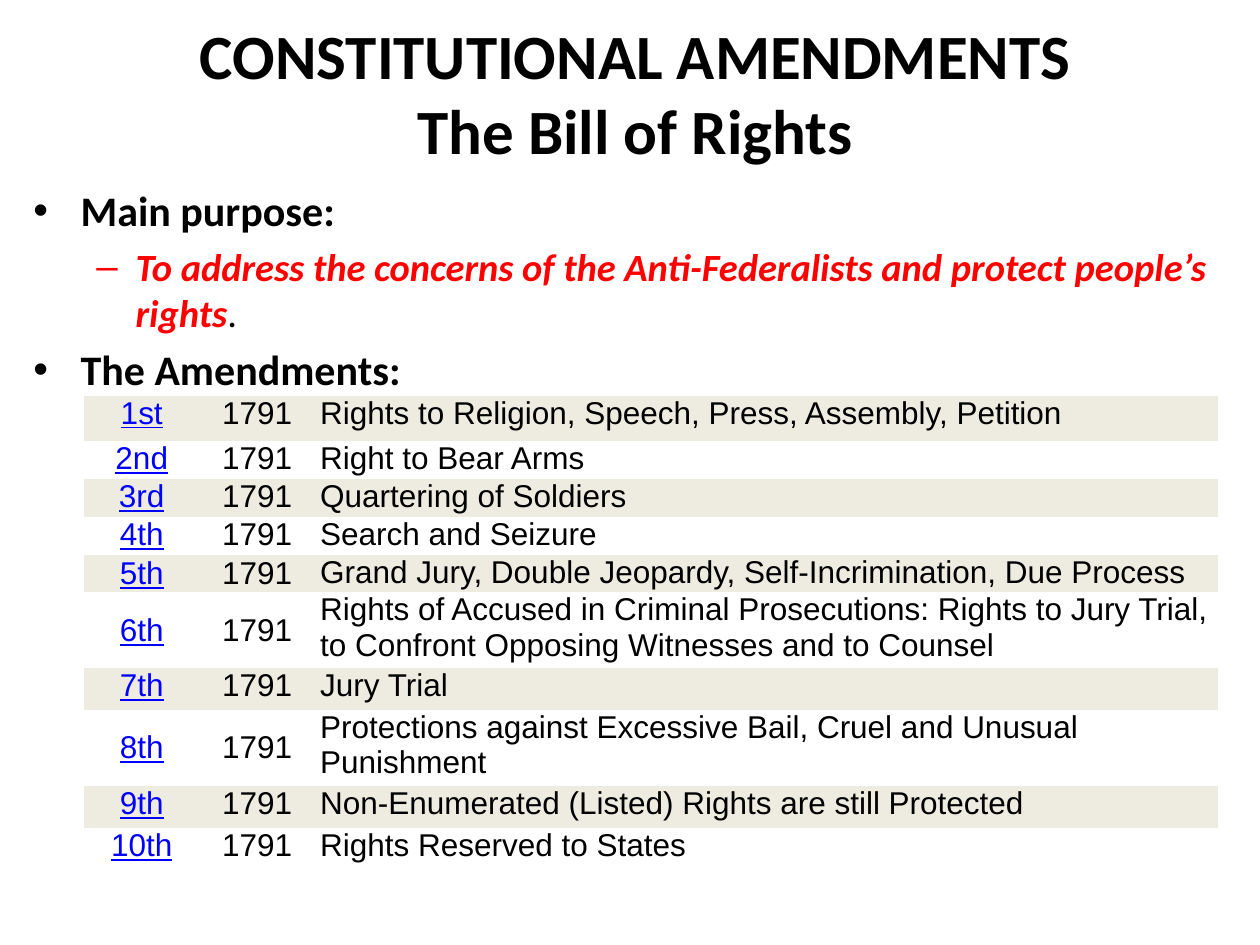
from lxml import etree
from pptx import Presentation
from pptx.dml.color import RGBColor
from pptx.enum.text import MSO_ANCHOR, PP_ALIGN
from pptx.oxml.ns import qn
from pptx.util import Pt

MID, TOP = MSO_ANCHOR.MIDDLE, MSO_ANCHOR.TOP
LEFT, CENTER = PP_ALIGN.LEFT, PP_ALIGN.CENTER
BLACK, RED, BLUE, BAND = "000000", "FF0000", "0000FF", "EEECE1"
PLAIN = "{2D5ABB26-0587-4C30-8999-92F81FD0307C}"

HEAD = {"name": "Calibri", "size": Pt(36), "bold": True}
ITEM = {"name": "Calibri", "size": Pt(24), "bold": True}
NOTE = {"name": "Calibri", "size": Pt(22), "bold": True, "italic": True}
STOP = {"name": "Calibri", "size": Pt(22)}
CELL = {"name": "Arial", "size": Pt(18)}
LINK = {**CELL, "underline": True}
INSET = {"margin_left": Pt(3), "margin_right": Pt(3),
         "margin_top": 0, "margin_bottom": 0}

YEAR = "1791"
COLS = (66, 66, 516)
ROWS = (
    ("1st", "Rights to Religion, Speech, Press, Assembly, Petition", 26, TOP),
    ("2nd", "Right to Bear Arms", 18, TOP),
    ("3rd", "Quartering of Soldiers", 18, TOP),
    ("4th", "Search and Seizure", 18, TOP),
    ("5th", "Grand Jury, Double Jeopardy, Self-Incrimination, Due Process",
     18, MID),
    ("6th", "Rights of Accused in Criminal Prosecutions: Rights to Jury "
     "Trial, to Confront Opposing Witnesses and to Counsel", 40, MID),
    ("7th", "Jury Trial", 24, TOP),
    ("8th", "Protections against Excessive Bail, Cruel and Unusual "
     "Punishment", 18, MID),
    ("9th", "Non-Enumerated (Listed) Rights are still Protected", 24, TOP),
    ("10th", "Rights Reserved to States", 24, TOP),
)


def tint(code):
    """Turn a hex string into a colour."""
    return RGBColor.from_string(code)


def assign(thing, form):
    """Set each attribute in a dict of format values."""
    for key, value in form.items():
        setattr(thing, key, value)


def add_run(para, text, form, color=BLACK):
    """Add one formatted run to a paragraph."""
    run = para.add_run()
    run.text = text
    assign(run.font, form)
    run.font.color.rgb = tint(color)


def add_box(slide, left, top, width, height, anchor=TOP):
    """Add a wrapped text box and return its frame."""
    box = slide.shapes.add_textbox(Pt(left), Pt(top), Pt(width), Pt(height))
    assign(box.text_frame, {"word_wrap": True, "vertical_anchor": anchor})
    return box.text_frame


def add_mark(para, mark, left, hang, gap):
    """Give a paragraph a bullet, a hanging indent and space above."""
    para.space_before = Pt(gap)
    props = para._p.get_or_add_pPr()
    props.set("marL", str(Pt(left)))
    props.set("indent", str(-Pt(hang)))
    etree.SubElement(props, qn("a:buFont")).set("typeface", "Arial")
    etree.SubElement(props, qn("a:buChar")).set("char", mark)


def add_title(slide):
    """Add the two-line heading."""
    para = add_box(slide, 0, 12, 726, 81, MID).paragraphs[0]
    para.alignment = CENTER
    for index, line in enumerate(
            ("CONSTITUTIONAL AMENDMENTS", "The Bill of Rights")):
        if index:
            para.add_line_break()
        add_run(para, line, HEAD)


def add_body(slide):
    """Add the bulleted purpose and the lead-in to the table."""
    frame = add_box(slide, 12, 102, 698, 425)
    first, note, last = (frame.paragraphs[0], frame.add_paragraph(),
                         frame.add_paragraph())
    for para, text in ((first, "Main purpose:"), (last, "The Amendments:")):
        add_mark(para, "•", 27, 27, 4.8)
        add_run(para, text, ITEM)
    note.level = 1
    add_mark(note, "–", 58.5, 22.5, 4.4)
    add_run(note, "To address the concerns of the Anti-Federalists and "
            "protect people’s rights", NOTE, RED)
    add_run(note, ".", STOP)


def fill_cell(cell, text, form, color, align, anchor, band):
    """Write and format one table cell."""
    assign(cell, {**INSET, "vertical_anchor": anchor})
    if band:
        cell.fill.solid()
        cell.fill.fore_color.rgb = tint(BAND)
    else:
        cell.fill.background()
    para = cell.text_frame.paragraphs[0]
    para.alignment = align
    add_run(para, text, form, color)


def add_grid(slide):
    """Add the table of amendments with every other row shaded."""
    high = sum(row[2] for row in ROWS)
    table = slide.shapes.add_table(len(ROWS), len(COLS), Pt(48), Pt(226),
                                   Pt(sum(COLS)), Pt(high)).table
    assign(table, {"first_row": False, "horz_banding": False})
    table._tbl.tblPr.find(qn("a:tableStyleId")).text = PLAIN
    for col, width in zip(table.columns, COLS):
        col.width = Pt(width)
    for index, (name, right, height, anchor) in enumerate(ROWS):
        row = table.rows[index]
        row.height = Pt(height)
        parts = ((name, LINK, BLUE, CENTER, anchor),
                 (YEAR, CELL, BLACK, CENTER, anchor),
                 (right, CELL, BLACK, LEFT, TOP))
        for cell, part in zip(row.cells, parts):
            fill_cell(cell, *part, index % 2 == 0)


def main():
    """Build and save the slide."""
    deck = Presentation()
    assign(deck, {"slide_width": Pt(720), "slide_height": Pt(540)})
    slide = deck.slides.add_slide(deck.slide_layouts[6])
    add_title(slide)
    add_body(slide)
    add_grid(slide)
    deck.save("out.pptx")


if __name__ == "__main__":
    main()
